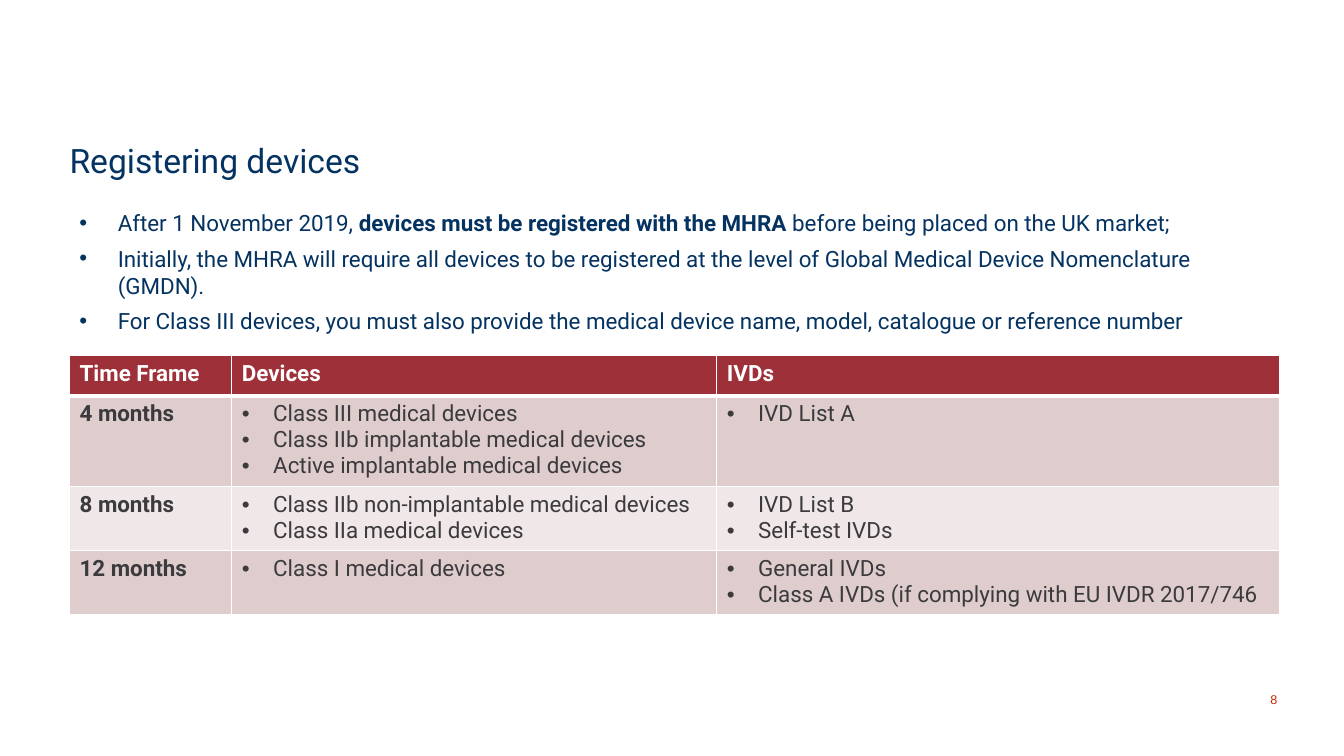
from lxml import etree
from pptx import Presentation, util as u
from pptx.dml.color import RGBColor
from pptx.enum import text
from pptx.oxml.ns import qn

COLORS = {"navy": "053361", "header": "9E3039", "band": "DFCDCE", "pale": "F0E8E8",
          "dark": "3B3A3D", "white": "FFFFFF", "number": "C32A00"}
TITLE = "Registering devices"
PAGE_NUMBER = "8"
# Each point is a list of (words, bold) spans.
POINTS = [
    [("After 1 November 2019, ", False),
     ("devices must be registered with the MHRA ", True),
     ("before being placed on the UK market;", False)],
    [("Initially, the MHRA will require all devices to be registered at the level of "
      "Global Medical Device Nomenclature (GMDN).", False)],
    [("For Class III devices, you must also provide the medical device name, model, "
      "catalogue or reference number", False)],
]
HEADINGS = ["Time Frame", "Devices", "IVDs"]
SCHEDULE = [
    ("4 months",
     ["Class III medical devices", "Class IIb implantable medical devices",
      "Active implantable medical devices"],
     ["IVD List A"]),
    ("8 months",
     ["Class IIb non-implantable medical devices", "Class IIa medical devices"],
     ["IVD List B", "Self-test IVDs"]),
    ("12 months",
     ["Class I medical devices"],
     ["General IVDs", "Class A IVDs (if complying with EU IVDR 2017/746"]),
]

WIDTH, HEIGHT = 13.33, 7.5
LEFT, CONTENT_WIDTH = 0.69, 12
COLUMNS = [1.61, 4.81, 5.58]
HEADER_HEIGHT, LINE_HEIGHT, CELL_PADDING = 0.4, 0.26, 0.1


def color(name):
    return RGBColor.from_string(COLORS[name])


def add_span(para, words, size, ink, bold=False, font="Roboto"):
    span = para.add_run()
    span.text = words
    span.font.size, span.font.name, span.font.bold = u.Pt(size), font, bold
    span.font.color.rgb = color(ink)


def add_bullet(para, indent):
    props = para._p.get_or_add_pPr()
    props.set("marL", str(u.Inches(indent)))
    props.set("indent", str(-u.Inches(indent)))
    etree.SubElement(props, qn("a:buFont")).set("typeface", "Arial")
    etree.SubElement(props, qn("a:buChar")).set("char", "•")


def paragraphs(frame, count):
    """Return count paragraphs of the frame, adding those it lacks."""
    return [frame.paragraphs[0]] + [frame.add_paragraph() for _ in range(count - 1)]


def add_box(page, left, top, width, height, inset=True):
    frame = page.shapes.add_textbox(*map(u.Inches, (left, top, width, height))).text_frame
    frame.word_wrap = True
    if not inset:
        frame.margin_left = frame.margin_right = frame.margin_top = frame.margin_bottom = 0
    return frame


def style_cell(cell, fill, bottom_width):
    cell.fill.solid()
    cell.fill.fore_color.rgb = color(fill)
    props = cell._tc.get_or_add_tcPr()
    for place, side in enumerate("LRTB"):
        line = etree.Element(qn(f"a:ln{side}"))
        line.set("w", str(u.Pt(bottom_width if side == "B" else 1)))
        solid = etree.SubElement(line, qn("a:solidFill"))
        etree.SubElement(solid, qn("a:srgbClr")).set("val", COLORS["white"])
        props.insert(place, line)


def add_schedule(page):
    heights = [HEADER_HEIGHT] + [CELL_PADDING + LINE_HEIGHT * max(map(len, row[1:]))
                                 for row in SCHEDULE]
    table = page.shapes.add_table(
        len(heights), len(COLUMNS), u.Inches(LEFT), u.Inches(3.53),
        u.Inches(CONTENT_WIDTH), u.Inches(sum(heights))).table
    for column, width in zip(table.columns, COLUMNS):
        column.width = u.Inches(width)
    for row, height in zip(table.rows, heights):
        row.height = u.Inches(height)

    for col, heading in enumerate(HEADINGS):
        cell = table.cell(0, col)
        style_cell(cell, "header", 3)
        add_span(cell.text_frame.paragraphs[0], heading, 16, "white", True)
    for row, (period, *groups) in enumerate(SCHEDULE, 1):
        for col, lines in enumerate([[period], *groups]):
            cell = table.cell(row, col)
            style_cell(cell, "band" if row % 2 else "pale", 1)
            for para, words in zip(paragraphs(cell.text_frame, len(lines)), lines):
                if col:
                    add_bullet(para, 0.31)
                add_span(para, words, 16, "dark", col == 0)


def main():
    deck = Presentation()
    deck.slide_width, deck.slide_height = u.Inches(WIDTH), u.Inches(HEIGHT)
    page = deck.slides.add_slide(deck.slide_layouts[6])

    title = add_box(page, LEFT, 1.39, CONTENT_WIDTH, 0.56, inset=False)
    add_span(title.paragraphs[0], TITLE, 24, "navy")

    add_schedule(page)

    number = add_box(page, 12.33, 6.86, 0.34, 0.15, inset=False).paragraphs[0]
    number.alignment = text.PP_ALIGN.RIGHT
    add_span(number, PAGE_NUMBER, 9, "number", font="Arial")

    body = add_box(page, LEFT, 2.03, CONTENT_WIDTH, 1.35)
    for para, spans in zip(paragraphs(body, len(POINTS)), POINTS):
        add_bullet(para, 0.38)
        para.space_after = u.Pt(6)
        for words, bold in spans:
            add_span(para, words, 16, "navy", bold)

    deck.save("out.pptx")


if __name__ == "__main__":
    main()
